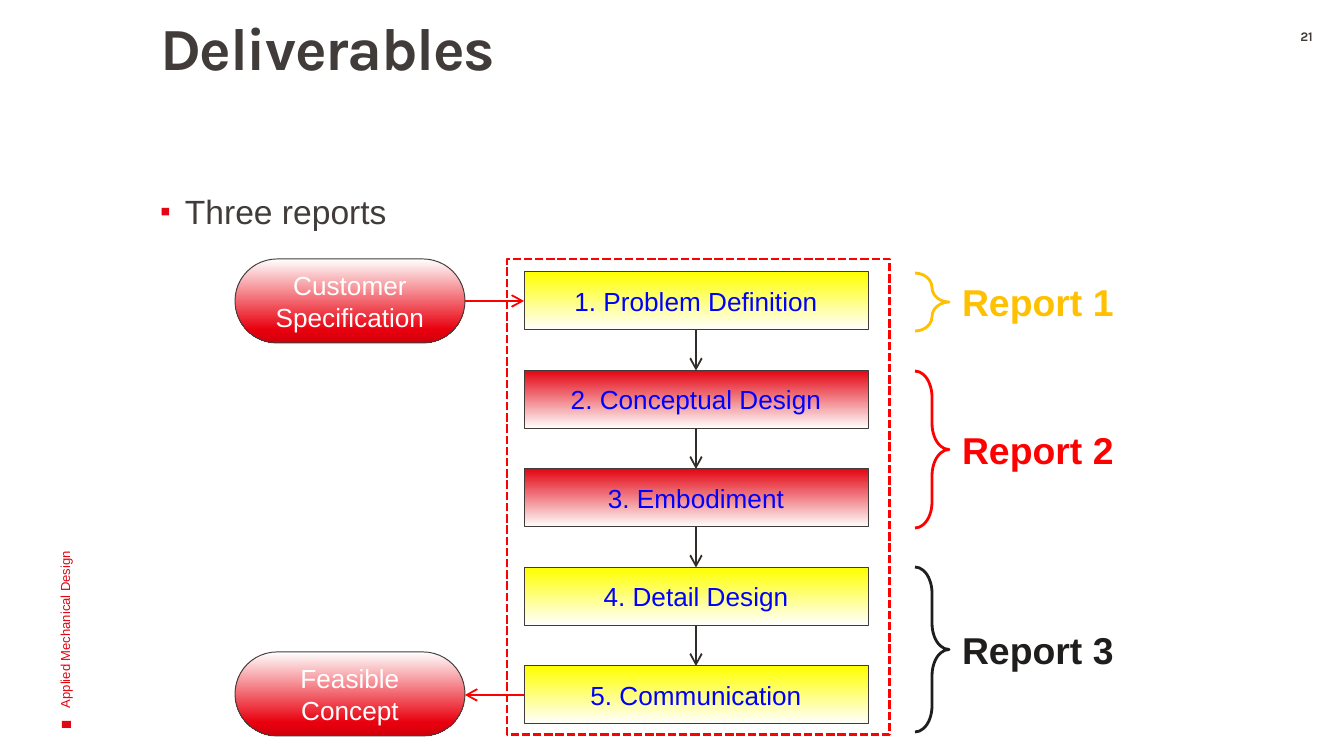
from copy import deepcopy

from pptx import Presentation
from pptx.dml.color import RGBColor
from pptx.enum.dml import MSO_LINE
from pptx.enum.shapes import MSO_CONNECTOR, MSO_SHAPE
from pptx.enum.text import MSO_ANCHOR, MSO_AUTO_SIZE, PP_ALIGN
from pptx.oxml import parse_xml
from pptx.oxml.ns import nsdecls, qn
from pptx.util import Emu, Pt

SCALE = 9144000 / 1344  # EMU in one px
RED, SIGNAL, DARK = "E30613", "FF0000", "413C3A"
YELLOW_FADE = [(0, "FFFF00"), (1, "FFFFFF")]
RED_FADE = [(0, RED), (1, "FFFFFF")]
PILL_FADE = [(0, "FFFFFF"), (0.84, "E9000E"), (1, "CF000C")]


def px(*values):
    return [Emu(round(v * SCALE)) for v in values]


def rgb(color):
    return RGBColor.from_string(color)


def set_text(sp, text, size, color, font="Arial", bold=False, align=PP_ALIGN.LEFT,
             anchor=MSO_ANCHOR.MIDDLE, insets=(13, 7, 13, 7)):
    tf = sp.text_frame
    left, top, right, bottom = px(*insets)
    frame = {"word_wrap": True, "auto_size": MSO_AUTO_SIZE.NONE, "vertical_anchor": anchor,
             "margin_left": left, "margin_top": top,
             "margin_right": right, "margin_bottom": bottom}
    for name, value in frame.items():
        setattr(tf, name, value)
    p = tf.paragraphs[0]
    p.alignment = align
    r = p.add_run()
    r.text = text
    for name, value in {"size": Pt(size), "name": font, "bold": bold}.items():
        setattr(r.font, name, value)
    r.font.color.rgb = rgb(color)
    return p


def place(sp, box):
    for name, value in zip(("left", "top", "width", "height"), px(*box)):
        setattr(sp, name, value)


def add_shape(s, kind, box, line=None, width=0.5):
    sp = s.shapes.add_shape(kind, *px(*box))
    sp.shadow.inherit = False
    sp.fill.background()
    if line:
        sp.line.color.rgb = rgb(line)
        sp.line.width = Pt(width)
    else:
        sp.line.fill.background()
    return sp


def fade_down(sp, stops):
    sp.fill.gradient()
    sp.fill.gradient_angle = 270
    stop_list = sp._element.spPr.find(".//" + qn("a:gsLst"))
    while len(stop_list) < len(stops):
        stop_list.append(deepcopy(stop_list[-1]))
    for stop, (position, color) in zip(sp.fill.gradient_stops, stops):
        stop.position = position
        stop.color.rgb = rgb(color)


def add_arrow(s, x1, y1, x2, y2, color):
    line = s.shapes.add_connector(MSO_CONNECTOR.STRAIGHT, *px(x1, y1, x2, y2))
    line.line.color.rgb = rgb(color)
    line.line.width = Pt(1)
    line.line._get_or_add_ln().append(parse_xml(f'<a:tailEnd {nsdecls("a")} type="arrow"/>'))
    line._element.spPr.append(parse_xml(f'<a:effectLst {nsdecls("a")}/>'))


def add_title(s, box):
    sp = s.shapes.title
    place(sp, box)
    p = set_text(sp, "Deliverables", 32, DARK, "Karla", True,
                 anchor=MSO_ANCHOR.TOP, insets=(27, 0, 11, 7))
    p.line_spacing = 0.9
    p.runs[0]._r.get_or_add_rPr().set("spc", "-70")


def add_body(s, box):
    sp = s.placeholders[1]
    place(sp, box)
    p = set_text(sp, "Three reports", 18, DARK, anchor=MSO_ANCHOR.TOP, insets=(27, 7, 13, 7))
    p.line_spacing = 0.9
    p.space_before = Pt(0)
    indent = px(25)[0]
    pPr = p._p.get_or_add_pPr()
    pPr.set("marL", str(indent))
    pPr.set("indent", str(-indent))
    for xml in (f'<a:buClr {nsdecls("a")}><a:srgbClr val="{RED}"/></a:buClr>',
                f'<a:buSzPct {nsdecls("a")} val="90000"/>',
                f'<a:buFont {nsdecls("a")} typeface="Arial"/>',
                f'<a:buChar {nsdecls("a")} char="▪"/>'):
        pPr.append(parse_xml(xml))


def add_side_label(s, box):
    """Course name reading upwards, with a small square below it."""
    x, y, w, h = box
    square = add_shape(s, MSO_SHAPE.RECTANGLE, (x + 62, y + h, 9, 7))
    square.fill.solid()
    square.fill.fore_color.rgb = rgb(RED)
    sp = s.shapes.add_textbox(*px(x + (w - h) / 2, y + (h - w) / 2, h, w))
    sp.rotation = 270
    set_text(sp, "Applied Mechanical Design", 7, RED)


def add_page_number(s, box):
    sp = s.shapes.add_textbox(*px(*box))
    set_text(sp, "21", 7, DARK, "Karla", True, PP_ALIGN.CENTER, MSO_ANCHOR.TOP, (13, 0, 13, 0))


def add_process(s, box):
    """Framed column of steps, with its input and output on the left."""
    x, y, w, h = box
    frame = add_shape(s, MSO_SHAPE.RECTANGLE, (x + 272, y, w - 272, h), SIGNAL, 1.5)
    frame.line.dash_style = MSO_LINE.SQUARE_DOT

    def add_node(text, node_box, radius, fade, color):
        sp = add_shape(s, MSO_SHAPE.ROUNDED_RECTANGLE, node_box, DARK)
        sp.adjustments[0] = radius
        fade_down(sp, fade)
        set_text(sp, text, 14, color, align=PP_ALIGN.CENTER)

    pill_w, pill_h = 230, 84
    for text, top in (("Customer Specification", y), ("Feasible Concept", y + h - pill_h + 1)):
        add_node(text, (x, top, pill_w, pill_h), 0.5, PILL_FADE, "FFFFFF")

    steps = [("1. Problem Definition", YELLOW_FADE), ("2. Conceptual Design", RED_FADE),
             ("3. Embodiment", RED_FADE), ("4. Detail Design", YELLOW_FADE),
             ("5. Communication", YELLOW_FADE)]
    step_x, step_w, step_h, pad = x + 289, 344, 58, 13
    pitch = (h - 2 * pad + 2 - step_h) / (len(steps) - 1)
    tops = [y + pad + i * pitch for i in range(len(steps))]
    for (text, fade), top in zip(steps, tops):
        add_node(text, (step_x, top, step_w, step_h), 0, fade, "0000FF")

    first, last = tops[0] + step_h / 2, tops[-1] + step_h / 2
    add_arrow(s, x + pill_w, first, step_x, first, SIGNAL)
    add_arrow(s, step_x, last, x + pill_w, last, SIGNAL)
    center = step_x + step_w / 2
    for top, below in zip(tops, tops[1:]):
        add_arrow(s, center, top + step_h, center, below, "312D2B")


def add_report(s, box, text, color):
    """Brace over the height of the box, with a label beside its tip."""
    x, y, w, h = box
    brace_w, label_h = 34, 59
    sp = s.shapes.add_textbox(*px(x + brace_w, y + (h - label_h) / 2, w - brace_w, label_h))
    set_text(sp, text, 20, color, bold=True)
    brace = add_shape(s, MSO_SHAPE.LEFT_BRACE, (x, y, brace_w, h), color, 1.5)
    brace.rotation = 180
    brace.adjustments[0] = 0.77


def main():
    prs = Presentation()
    prs.slide_width, prs.slide_height = px(1344, 756)
    s = prs.slides.add_slide(prs.slide_layouts[1])
    add_title(s, (133, 19, 699, 157))
    add_body(s, (133, 188, 1136, 532))
    add_side_label(s, (0, 231, 130, 490))
    add_page_number(s, (1269, 28, 75, 24))
    add_process(s, (235, 259, 655, 476))
    for text, top, height, color in (("Report 1", 273, 58, "FFC000"),
                                     ("Report 2", 371, 157, SIGNAL),
                                     ("Report 3", 567, 165, "201E1D")):
        add_report(s, (915, top, 260, height), text, color)
    prs.save("out.pptx")


if __name__ == "__main__":
    main()
